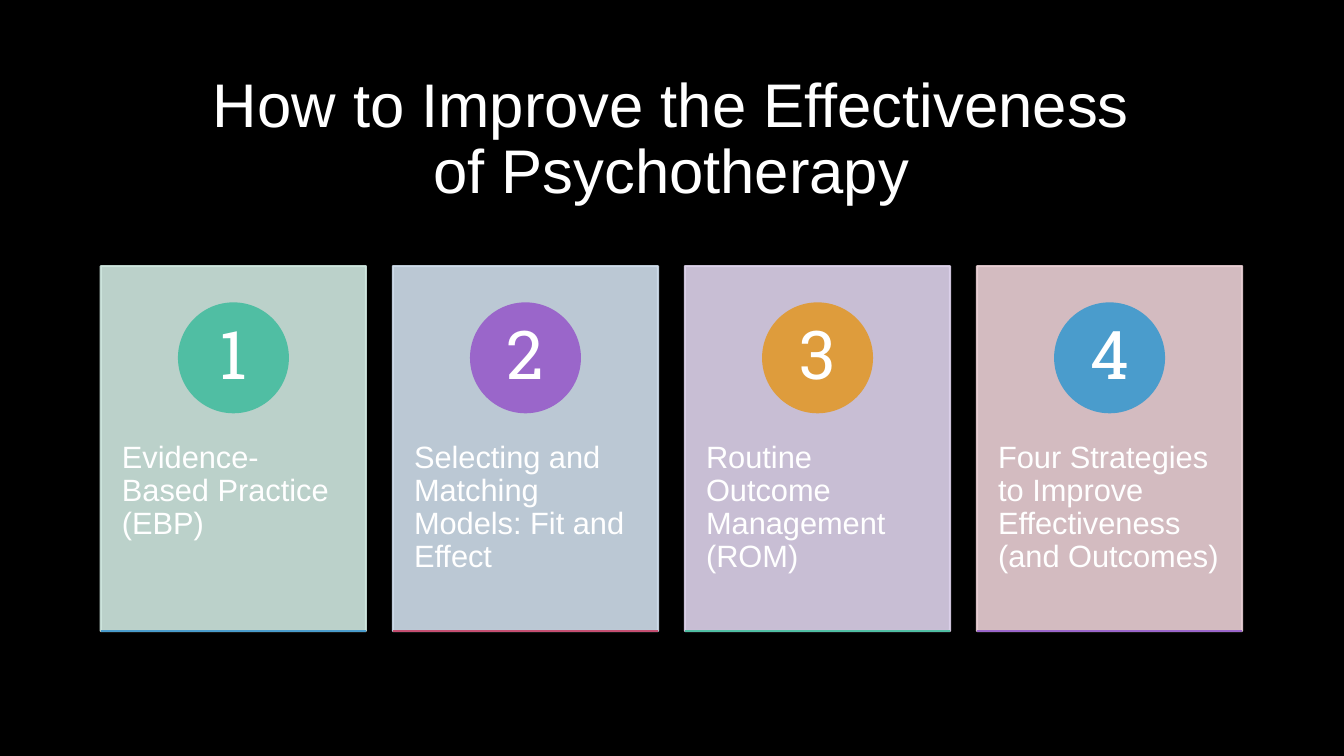
"""Build a slide with four numbered cards on improving psychotherapy."""
import pptx
import pptx.dml.fill
import pptx.enum.shapes
import pptx.enum.text
import pptx.oxml
import pptx.oxml.ns
import pptx.util
from pptx.util import Inches

ALIGN = pptx.enum.text.PP_ALIGN
ANCHOR = pptx.enum.text.MSO_ANCHOR
SHAPE = pptx.enum.shapes.MSO_SHAPE


def colour(fill, hex_code, opacity=100):
    """Give a fill, line or font a solid colour."""
    fill.solid()
    fill.fore_color.rgb = pptx.dml.color.RGBColor.from_string(hex_code)
    if opacity < 100:
        tone = fill._xPr.find(".//" + pptx.oxml.ns.qn("a:srgbClr"))
        alpha = pptx.oxml.parse_xml(f'<a:alpha {pptx.oxml.ns.nsdecls("a")} val="{opacity * 1000}"/>')
        tone.append(alpha)


def write(holder, words, size, face, align, anchor, side, end):
    """Fill a shape with one formatted white paragraph."""
    frame = holder.text_frame
    frame.text = words
    paragraph = frame.paragraphs[0]
    formats = {
        frame: {"word_wrap": True, "auto_size": pptx.enum.text.MSO_AUTO_SIZE.NONE,
                "vertical_anchor": anchor,
                "margin_left": Inches(side), "margin_right": Inches(side),
                "margin_top": Inches(end), "margin_bottom": Inches(end)},
        paragraph: {"alignment": align, "line_spacing": 0.9},
    }
    for run in paragraph.runs:
        formats[run.font] = {"size": pptx.util.Pt(size), "name": face}
        colour(run.font.fill, "FFFFFF")
    for part, values in formats.items():
        for attribute, value in values.items():
            setattr(part, attribute, value)


deck = pptx.Presentation()
deck.slide_width, deck.slide_height = Inches(13.33), Inches(7.5)
slide = deck.slides.add_slide(deck.slide_layouts[5])
colour(slide.background.fill, "000000")

heading = slide.shapes.title
place = {"left": 1, "top": 0.67, "width": 11.32, "height": 1.45}
for side, length in place.items():
    setattr(heading, side, Inches(length))
write(heading, "How to Improve the Effectiveness\vof Psychotherapy",
      44, "Arial", ALIGN.CENTER, ANCHOR.MIDDLE, 0.1, 0.05)

strategies = [
    ("Evidence-Based Practice (EBP)", "D0E8E0", "50BEA3", "4A9CCC"),
    ("Selecting and Matching Models: Fit and Effect", "D0DEEC", "9A66CA", "C54F71"),
    ("Routine Outcome Management (ROM)", "DED3EC", "DE9C3C", "50BEA3"),
    ("Four Strategies to Improve Effectiveness (and Outcomes)", "EAD0D5", "4A9CCC", "9A66CA"),
]
card_width, card_top, card_height, badge_size = 2.63, 2.64, 3.62, 1.08
pitch = (place["width"] - card_width) / (len(strategies) - 1)

for index, (strategy, card_tint, badge_tint, edge_tint) in enumerate(strategies):
    left = place["left"] + index * pitch
    bottom = Inches(card_top + card_height)

    card = slide.shapes.add_shape(SHAPE.RECTANGLE, Inches(left), Inches(card_top),
                                  Inches(card_width), Inches(card_height))
    label = slide.shapes.add_textbox(Inches(left), Inches(4.02), Inches(card_width), Inches(2.17))
    write(label, strategy, 22, "Arial", ALIGN.LEFT, ANCHOR.TOP, 0.21, 0.36)

    badge = slide.shapes.add_shape(SHAPE.OVAL, Inches(left + (card_width - badge_size) / 2),
                                   Inches(3.01), Inches(badge_size), Inches(badge_size))
    write(badge, str(index + 1), 48, "Roboto Slab", ALIGN.CENTER, ANCHOR.MIDDLE, 0.08, 0.01)

    for panel, tint, opacity in ((card, card_tint, 90), (badge, badge_tint, 100)):
        panel.shadow.inherit = False
        panel.line.width = pptx.util.Pt(1.5)
        colour(panel.fill, tint, opacity)
        colour(panel.line.fill, tint, opacity)

    edge = slide.shapes.add_connector(pptx.enum.shapes.MSO_CONNECTOR.STRAIGHT,
                                      Inches(left), bottom, Inches(left + card_width), bottom)
    edge.line.width = pptx.util.Pt(1.5)
    colour(edge.line.fill, edge_tint)
    edge._element.spPr.append(pptx.oxml.parse_xml(f'<a:effectLst {pptx.oxml.ns.nsdecls("a")}/>'))

deck.save("out.pptx")
